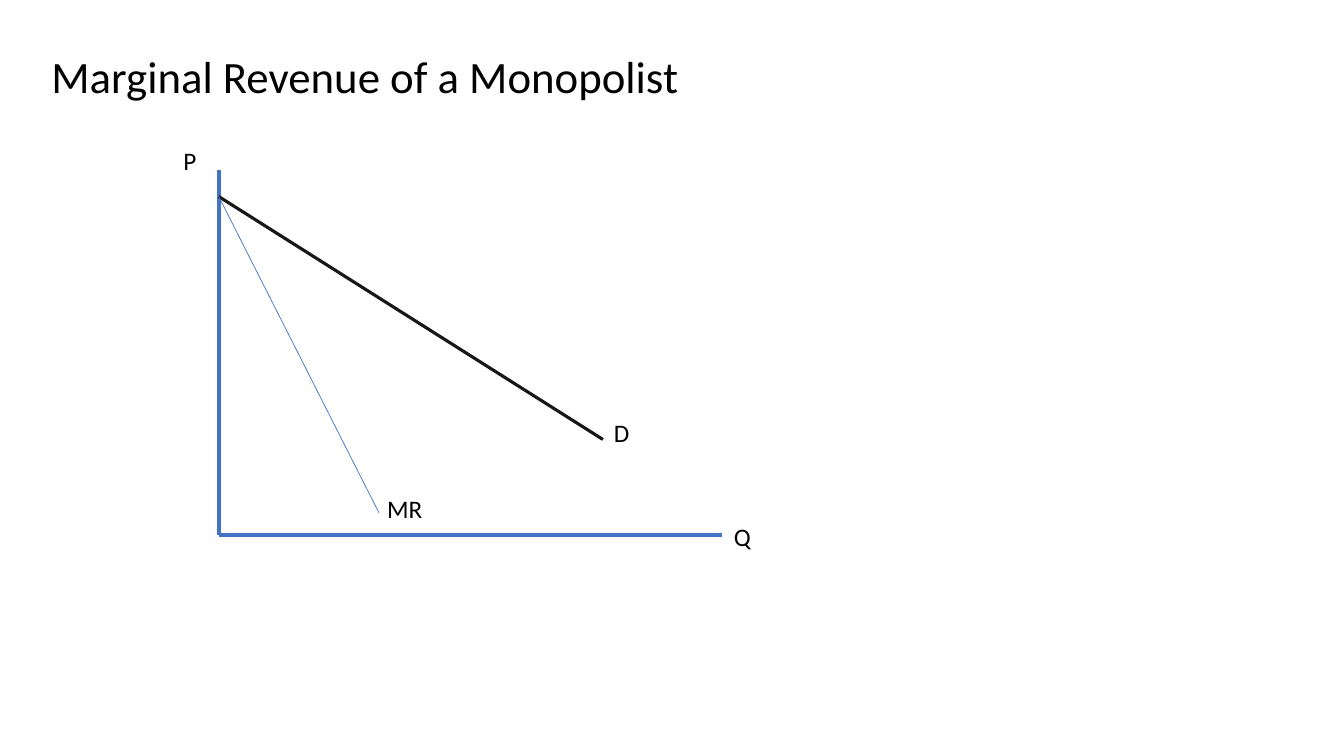
from dataclasses import dataclass

from lxml.etree import SubElement
from pptx import Presentation
from pptx.dml.color import RGBColor
from pptx.enum.shapes import MSO_CONNECTOR
from pptx.enum.text import MSO_ANCHOR, PP_ALIGN
from pptx.oxml.ns import qn
from pptx.util import Inches, Pt


@dataclass(frozen=True)
class Theme:
    font: str = "Calibri"
    text: RGBColor = RGBColor(0x00, 0x00, 0x00)
    blue: RGBColor = RGBColor(0x44, 0x72, 0xC4)
    dark: RGBColor = RGBColor(0x18, 0x17, 0x17)
    title_size: int = 32
    label_size: int = 18
    axis_width: float = 3
    demand_width: float = 2.25
    revenue_width: float = 0.5


THEME = Theme()


def write_text(sp, text, size):
    tf = sp.text_frame
    frame = {
        "word_wrap": True,
        "vertical_anchor": MSO_ANCHOR.TOP,
        "margin_left": Inches(0.1),
        "margin_right": Inches(0.1),
        "margin_top": Inches(0.05),
        "margin_bottom": Inches(0.05),
    }
    for name, value in frame.items():
        setattr(tf, name, value)
    p = tf.paragraphs[0]
    for name, value in {"alignment": PP_ALIGN.LEFT, "line_spacing": 1.0}.items():
        setattr(p, name, value)
    r = p.add_run()
    r.text = text
    for name, value in {"name": THEME.font, "size": Pt(size), "bold": False}.items():
        setattr(r.font, name, value)
    r.font.color.rgb = THEME.text


def add_title(s, box, text):
    sp = s.shapes.title
    for name, value in zip(("left", "top", "width", "height"), box):
        setattr(sp, name, Inches(value))
    write_text(sp, text, THEME.title_size)


def add_line(s, start, end, color, width):
    line = s.shapes.add_connector(
        MSO_CONNECTOR.STRAIGHT, *(Inches(v) for v in (*start, *end))
    )
    line.line.color.rgb = color
    line.line.width = Pt(width)
    SubElement(line._element.spPr, qn("a:effectLst"))


def add_label(s, left, top, text):
    sp = s.shapes.add_textbox(Inches(left), Inches(top), Inches(0.91), Inches(0.4))
    write_text(sp, text, THEME.label_size)


def add_graph(s, box):
    left, top, width, height = box
    right, bottom = left + width, top + height
    origin = (left, bottom)
    intercept = (left, top + 0.26)
    demand_end = (left + 3.81, top + 2.67)
    revenue_end = (left + 1.59, top + 3.4)

    lines = [
        ((left, top), origin, THEME.blue, THEME.axis_width),
        (origin, (right, bottom), THEME.blue, THEME.axis_width),
        (intercept, demand_end, THEME.dark, THEME.demand_width),
        (intercept, revenue_end, THEME.blue, THEME.revenue_width),
    ]
    for line in lines:
        add_line(s, *line)

    labels = [
        ("D", demand_end, 0.01, -0.27),
        ("MR", revenue_end, -0.02, -0.25),
        ("Q", (right, bottom), 0.02, -0.19),
        ("P", (left, top), -0.45, -0.3),
    ]
    for text, (x, y), dx, dy in labels:
        add_label(s, x + dx, y + dy, text)


def main():
    prs = Presentation()
    prs.slide_width = Inches(13.33)
    prs.slide_height = Inches(7.5)
    s = prs.slides.add_slide(prs.slide_layouts[5])
    add_title(s, (0.41, 0.43, 7.22, 0.64), "Marginal Revenue of a Monopolist")
    add_graph(s, (2.17, 1.69, 4.99, 3.62))
    prs.save("out.pptx")


if __name__ == "__main__":
    main()
